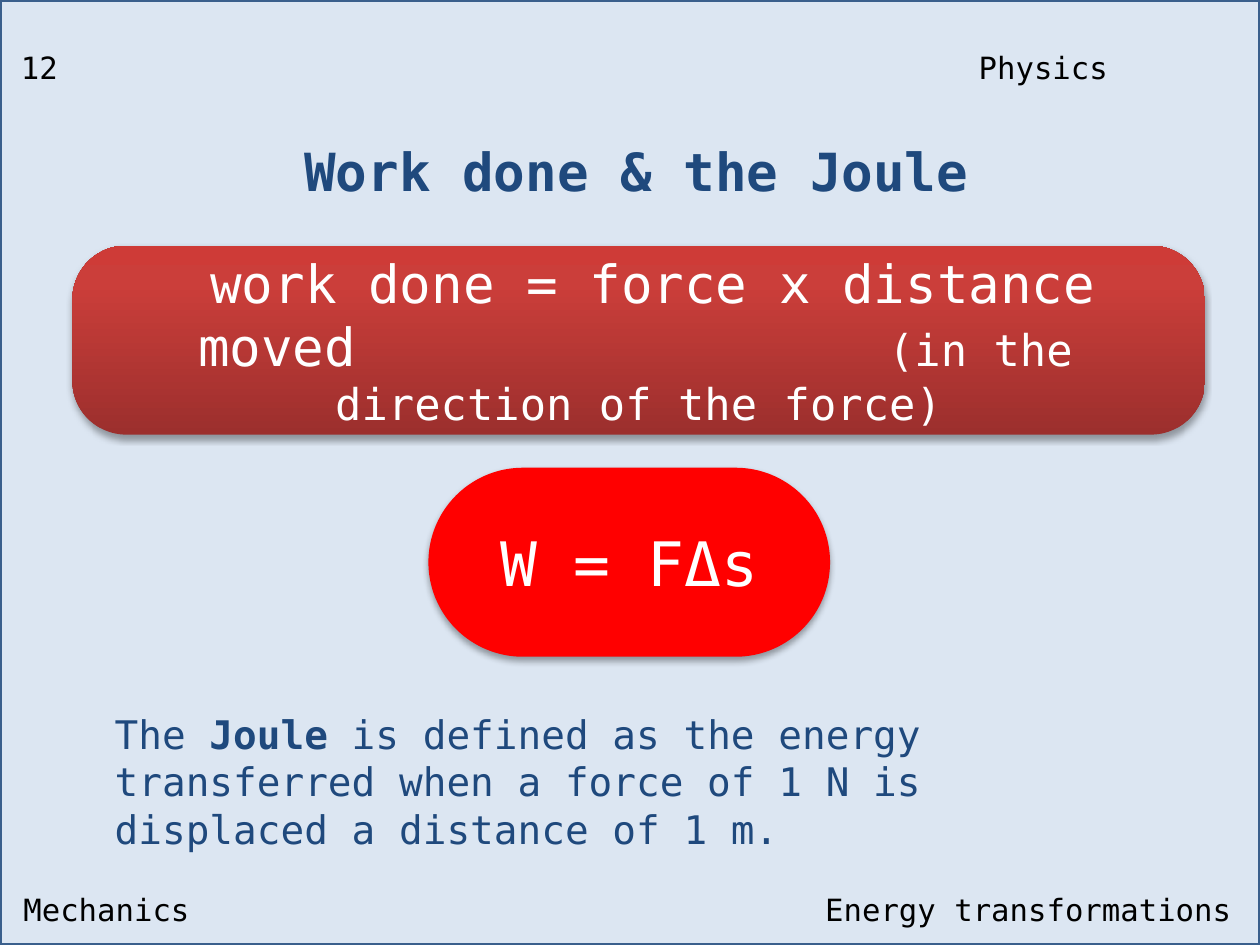
import pptx
import pptx.dml.color
import pptx.enum.shapes
import pptx.enum.text
import pptx.oxml
import pptx.oxml.ns
import pptx.util
from pptx.util import Inches

FONT = "DejaVu Sans Mono"
BLACK, NAVY, WHITE, RED = "000000", "1F497D", "FFFFFF", "FF0000"
PAPER, FRAME = "DCE6F2", "3A5F8C"
LEFT = pptx.enum.text.PP_ALIGN.LEFT
CENTER = pptx.enum.text.PP_ALIGN.CENTER
RIGHT = pptx.enum.text.PP_ALIGN.RIGHT
TOP = pptx.enum.text.MSO_ANCHOR.TOP
MIDDLE = pptx.enum.text.MSO_ANCHOR.MIDDLE
RECTANGLE = pptx.enum.shapes.MSO_SHAPE.RECTANGLE
ROUNDED = pptx.enum.shapes.MSO_SHAPE.ROUNDED_RECTANGLE

WIDTH, HEIGHT = 8, 6
TITLE = ("Work done & the Joule", (1.33, 0.83, 5.42, 0.5))
CORNERS = [
    ("Mechanics", (0.05, 5.61, 2.25, 0.34), LEFT),
    ("Physics", (5.5, 0.26, 2.25, 0.34), CENTER),
    ("12", (0, 0.26, 0.5, 0.34), CENTER),
    ("Energy transformations", (3.5, 5.61, 4.42, 0.34), RIGHT),
]
DEFINITION = [
    ("The ", {"size": 18}),
    ("Joule", {"size": 18, "bold": True}),
    (" is defined as the energy transferred when a force of 1 N is "
     "displaced a distance of 1 m.", {"size": 18}),
]
DEFINITION_BOX = (0.63, 4.46, 6.73, 0.71)
LAW = [
    ([("work done = force x distance", {"size": 24})], CENTER, 0.18, ()),
    ([("\tmoved\t", {"size": 24}), ("(in the", {"size": 20})], LEFT, 0, (0.6, 4.98)),
    ([("direction of the force)", {"size": 20})], CENTER, 0, ()),
]
LAW_BOX = (0.46, 1.56, 7.19, 1.2)
LAW_STOPS = [(0, "9C2F2D"), (80, "CB3E3A"), (100, "CE3B37")]
FORMULA = [([("W = FΔs", {"size": 28})], CENTER, 0, ())]
FORMULA_BOX = (2.72, 2.97, 2.55, 1.2)
NS = pptx.oxml.ns.nsdecls("a")


def color(value):
    return pptx.dml.color.RGBColor.from_string(value)


def place(part, box):
    for side, length in zip(("left", "top", "width", "height"), box):
        setattr(part, side, Inches(length))


def write(part, paragraphs, ink, anchor=TOP):
    frame = part.text_frame
    frame.word_wrap = True
    frame.vertical_anchor = anchor
    for index, (runs, align, indent, tabs) in enumerate(paragraphs):
        paragraph = frame.add_paragraph() if index else frame.paragraphs[0]
        paragraph.alignment = align
        props = paragraph._p.get_or_add_pPr()
        if indent:
            props.set("marL", str(Inches(indent)))
        if tabs:
            stops = "".join(f'<a:tab pos="{Inches(tab)}" algn="l"/>' for tab in tabs)
            props.append(pptx.oxml.parse_xml(f"<a:tabLst {NS}>{stops}</a:tabLst>"))
        for text, style in runs:
            run = paragraph.add_run()
            run.text = text
            values = {"name": FONT, "bold": False, **style}
            values["size"] = pptx.util.Pt(values["size"])
            for key, value in values.items():
                setattr(run.font, key, value)
            run.font.color.rgb = color(ink)


def add_text(slide, box, paragraphs, ink):
    part = slide.shapes.add_textbox(*map(Inches, box))
    write(part, paragraphs, ink)


def add_capsule(slide, box, rounding, paragraphs):
    capsule = slide.shapes.add_shape(ROUNDED, *map(Inches, box))
    capsule.adjustments[0] = rounding
    capsule.fill.solid()
    capsule.fill.fore_color.rgb = color(RED)
    capsule.line.fill.background()
    capsule._element.spPr.append(pptx.oxml.parse_xml(
        f'<a:effectLst {NS}><a:outerShdw blurRad="{pptx.util.Pt(3.1)}" '
        f'dist="{pptx.util.Pt(1.8)}" dir="5400000" rotWithShape="0">'
        f'<a:srgbClr val="{BLACK}"><a:alpha val="35000"/></a:srgbClr>'
        f"</a:outerShdw></a:effectLst>"))
    write(capsule, paragraphs, WHITE, MIDDLE)
    return capsule


def shade(capsule, stops):
    marks = "".join(f'<a:gs pos="{percent * 1000}"><a:srgbClr val="{value}"/></a:gs>'
                    for percent, value in stops)
    gradient = pptx.oxml.parse_xml(
        f'<a:gradFill {NS} rotWithShape="1"><a:gsLst>{marks}</a:gsLst>'
        f'<a:lin ang="16200000" scaled="0"/></a:gradFill>')
    props = capsule._element.spPr
    props.replace(props.find(pptx.oxml.ns.qn("a:solidFill")), gradient)


def main():
    deck = pptx.Presentation()
    deck.slide_width, deck.slide_height = Inches(WIDTH), Inches(HEIGHT)
    slide = deck.slides.add_slide(deck.slide_layouts[5])
    slide.background.fill.solid()
    slide.background.fill.fore_color.rgb = color(PAPER)

    border = slide.shapes.add_shape(RECTANGLE, 0, 0, Inches(WIDTH), Inches(HEIGHT))
    border.shadow.inherit = False
    border.fill.background()
    border.line.color.rgb = color(FRAME)
    border.line.width = pptx.util.Pt(2)

    for text, box, align in CORNERS:
        add_text(slide, box, [([(text, {"size": 14})], align, 0, ())], BLACK)

    heading, heading_box = TITLE
    title = slide.shapes.title
    place(title, heading_box)
    write(title, [([(heading, {"size": 24, "bold": True})], CENTER, 0, ())], NAVY, MIDDLE)

    law = add_capsule(slide, LAW_BOX, 0.285, LAW)
    shade(law, LAW_STOPS)
    add_text(slide, DEFINITION_BOX, [(DEFINITION, LEFT, 0, ())], NAVY)
    add_capsule(slide, FORMULA_BOX, 0.5, FORMULA)

    deck.save("out.pptx")


if __name__ == "__main__":
    main()
